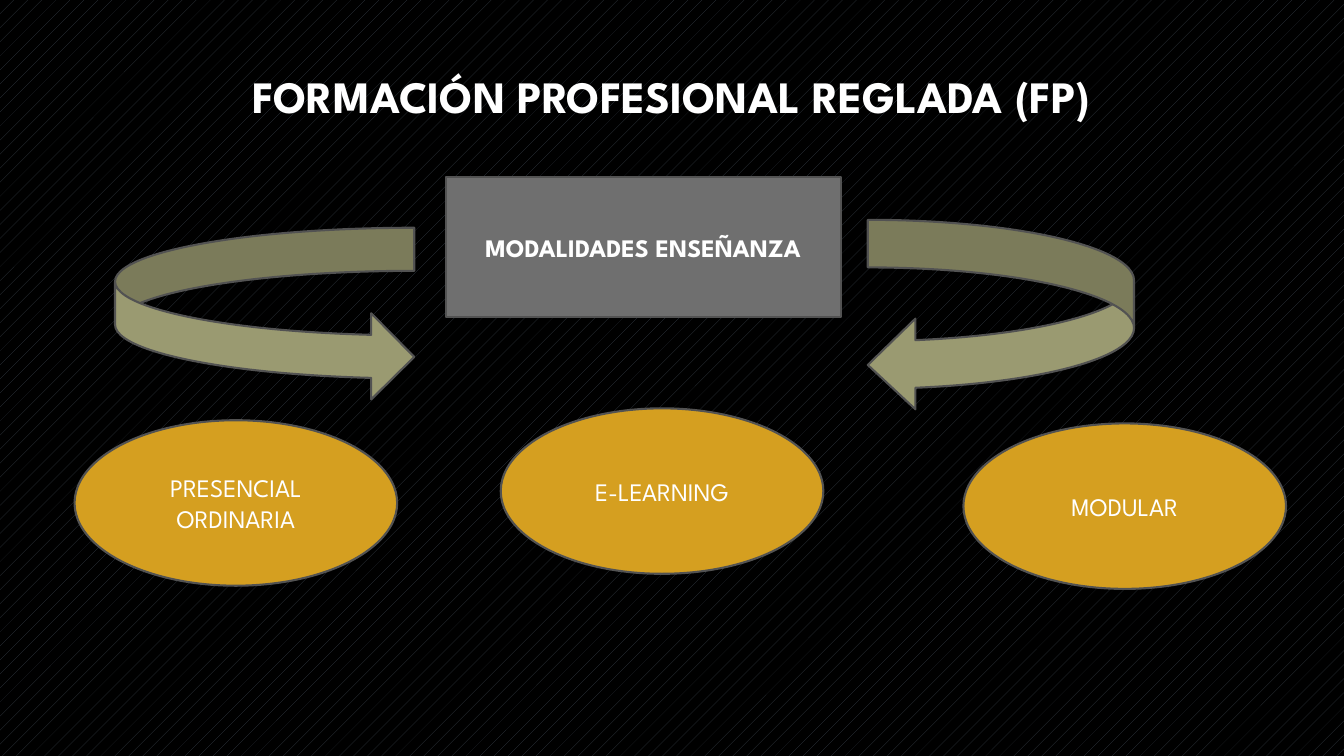
from pptx import Presentation
from pptx.dml.color import RGBColor
from pptx.enum.dml import MSO_PATTERN
from pptx.enum.shapes import MSO_SHAPE
from pptx.enum.text import MSO_ANCHOR, PP_ALIGN
from pptx.util import Cm, Pt

RECT, OVAL = MSO_SHAPE.RECTANGLE, MSO_SHAPE.OVAL
RIGHT, LEFT = MSO_SHAPE.CURVED_RIGHT_ARROW, MSO_SHAPE.CURVED_LEFT_ARROW
DOTS = MSO_PATTERN.PERCENT_5
MIDDLE, CENTER = MSO_ANCHOR.MIDDLE, PP_ALIGN.CENTER
FONT = "League Spartan"
COLORS = {"back": "000000", "dots": "363D46", "text": "FFFFFF", "line": "525252",
          "box": "6F6F6F", "mode": "D59F20", "arrow": "9A9A71"}


def color(name):
    return RGBColor.from_string(COLORS[name])


def write(shape, text, size, bold=False):
    frame = shape.text_frame
    frame.word_wrap = True
    frame.vertical_anchor = MIDDLE
    para = frame.paragraphs[0]
    para.alignment = CENTER
    run = para.add_run()
    run.text = text
    font = run.font
    font.name, font.size, font.bold = FONT, Pt(size), bold
    font.color.rgb = color("text")


def draw(slide, kind, box, fill):
    shape = slide.shapes.add_shape(kind, *map(Cm, box))
    shape.shadow.inherit = False
    shape.fill.solid()
    shape.fill.fore_color.rgb = color(fill)
    shape.line.color.rgb = color("line")
    shape.line.width = Pt(1.5)
    return shape


def paint(slide):
    """Fill the background with a sparse pattern."""
    fill = slide.background.fill
    fill.patterned()
    fill.pattern = DOTS
    fill.fore_color.rgb = color("dots")
    fill.back_color.rgb = color("back")


def title(slide, box):
    write(slide.shapes.add_textbox(*map(Cm, box)),
          "FORMACIÓN PROFESIONAL REGLADA (FP)", 32, True)


def topic(slide, box):
    write(draw(slide, RECT, box, "box"), "MODALIDADES ENSEÑANZA", 18, True)


def modes(slide, box):
    """Place one oval per mode, each offset from the corner of the box."""
    left, top, width, height = box
    for text, dx, dy in (("PRESENCIAL ORDINARIA", 0, 0.3),
                         ("E-LEARNING", 10.74, 0),
                         ("MODULAR", 22.4, 0.38)):
        oval = draw(slide, OVAL, (left + dx, top + dy, width, height), "mode")
        write(oval, text, 18)


def arrows(slide, box):
    """Place the two curved arrows at the outer sides of the box."""
    left, top, width, height = box
    draw(slide, RIGHT, (left, top + 0.2, 7.54, 4.34), "arrow")
    back = draw(slide, LEFT, (left + width - 6.71, top, 6.71, height), "arrow")
    back.adjustments[1] = 0.476


def main():
    deck = Presentation()
    deck.slide_width, deck.slide_height = Cm(33.87), Cm(19.05)
    slide = deck.slides.add_slide(deck.slide_layouts[6])
    paint(slide)
    title(slide, (3.18, 0.97, 27.51, 2.9))
    topic(slide, (11.23, 4.47, 9.96, 3.53))
    modes(slide, (1.88, 10.29, 8.13, 4.17))
    arrows(slide, (2.9, 5.54, 25.68, 4.8))
    deck.save("out.pptx")


if __name__ == "__main__":
    main()
